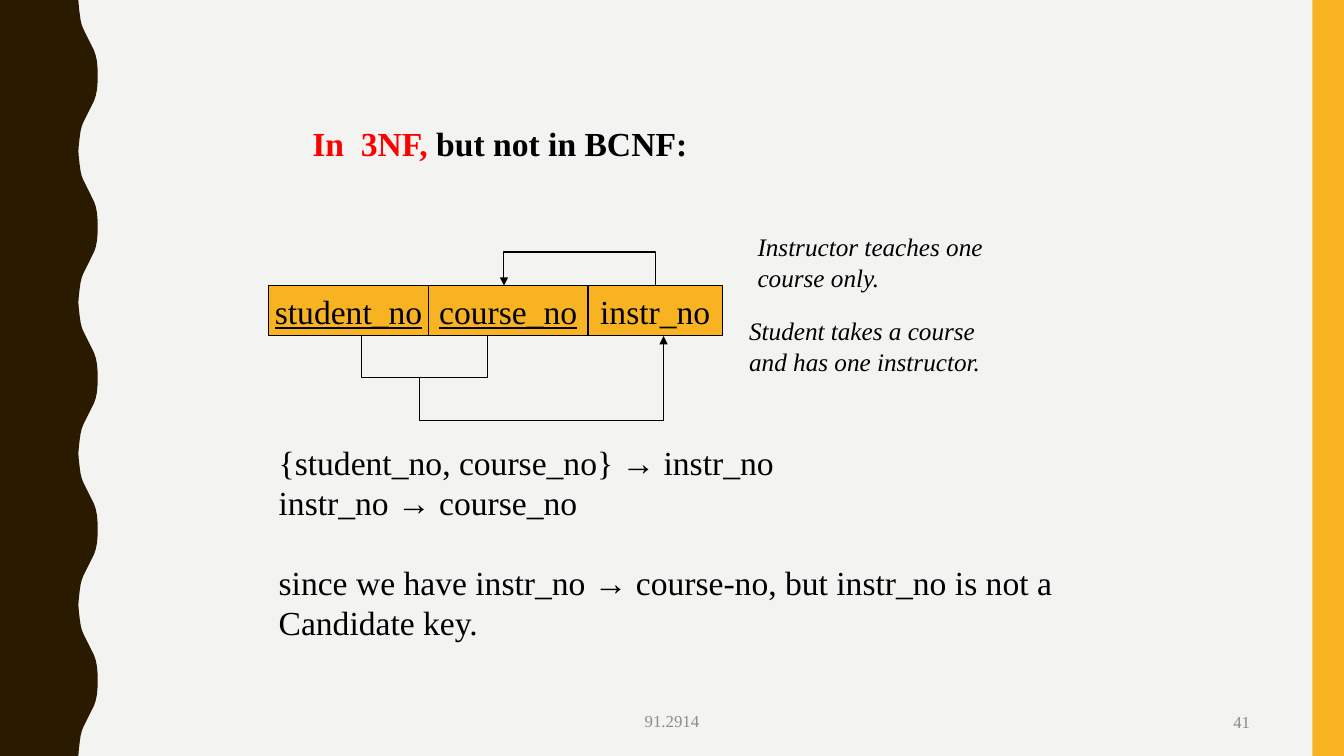
import pptx
import pptx.util
import pptx.dml.color
import pptx.enum.shapes
import pptx.enum.text
import pptx.oxml
import pptx.oxml.ns
from dataclasses import dataclass

ALIGN = pptx.enum.text.PP_ALIGN
ANCHOR = pptx.enum.text.MSO_ANCHOR


@dataclass(frozen=True)
class Theme:
    face: str = "Times New Roman"
    back: str = "F3F3F2"
    dark: str = "2A1A00"
    gold: str = "F8B323"
    ink: str = "000000"
    red: str = "FF0000"
    foot: str = "8C8C8C"
    page: str = "898989"
    large: int = 24
    note: int = 18
    small: int = 12
    rule: float = 0.75


def paint(fill, color):
    fill.solid()
    fill.fore_color.rgb = pptx.dml.color.RGBColor.from_string(color)


class Board:
    """A slide on a grid of 160 columns and 90 rows, twelve to the inch."""

    def __init__(self, deck, theme):
        self.theme = theme
        self.unit = pptx.util.Inches(1) / 12
        self.slide = deck.slides.add_slide(deck.slide_layouts[6])
        paint(self.slide.background.fill, theme.back)

    def grid(self, *cells):
        return [round(cell * self.unit) for cell in cells]

    def style(self, shape, fill=None, line=None):
        shape.shadow.inherit = False
        if fill:
            paint(shape.fill, fill)
        else:
            shape.fill.background()
        if line:
            paint(shape.line.fill, line)
            shape.line.width = pptx.util.Pt(self.theme.rule)
        else:
            shape.line.fill.background()

    def label(self, shape, lines, align=ALIGN.LEFT, anchor=ANCHOR.TOP, wrap=True, **base):
        """Fill a shape with lines of (text, format) runs; a gap goes before its line."""
        frame = shape.text_frame
        for key, value in dict(word_wrap=wrap, vertical_anchor=anchor).items():
            setattr(frame, key, value)
        for row, runs in enumerate(lines):
            para = frame.paragraphs[0] if row == 0 else frame.add_paragraph()
            para.alignment = align
            for text, form in runs:
                look = dict(name=self.theme.face, size=self.theme.large, color=self.theme.ink)
                look.update(base)
                look.update(form)
                if "gap" in look:
                    para.space_before = pptx.util.Pt(look.pop("gap"))
                run = para.add_run()
                run.text = text
                if "track" in look:
                    run.font._element.set("spc", str(look.pop("track") * 100))
                paint(run.font.fill, look.pop("color"))
                look["size"] = pptx.util.Pt(look["size"])
                for key, value in look.items():
                    setattr(run.font, key, value)

    def text(self, box, lines, **form):
        self.label(self.slide.shapes.add_textbox(*self.grid(*box)), lines, **form)

    def rect(self, box, fill, line=None):
        kind = pptx.enum.shapes.MSO_SHAPE.RECTANGLE
        shape = self.slide.shapes.add_shape(kind, *self.grid(*box))
        self.style(shape, fill, line)
        return shape

    def trace(self, points, fill=None, line=None, arrow=False):
        first, *rest = [self.grid(*point) for point in points]
        pen = self.slide.shapes.build_freeform(*first)
        pen.add_line_segments(rest, close=bool(fill))
        shape = pen.convert_to_shape()
        self.style(shape, fill, line)
        if arrow:
            edge = shape.element.spPr.find(pptx.oxml.ns.qn("a:ln"))
            space = pptx.oxml.ns.nsdecls("a")
            edge.append(pptx.oxml.parse_xml(f'<a:tailEnd {space} type="triangle"/>'))


def wave():
    """Outline of the left band: five mirrored bulges, 18 rows each."""
    xs = (9.33, 9.4, 9.5, 9.6, 9.75, 9.95, 10.2, 10.45, 10.7, 10.95, 11.2, 11.4, 11.55, 11.62, 11.64)
    ys = (0, 0.84, 1.68, 2.4, 3, 3.5, 4, 4.5, 5, 5.5, 6, 6.6, 7.32, 8.16, 9)
    half = list(zip(xs, ys))
    bulge = half + [(x, 18 - y) for x, y in half[-2::-1]]
    edge = [(x, y + 18 * turn) for turn in range(5) for x, y in bulge]
    return [(0, 0)] + edge + [(0, 90)]


def main():
    deck = pptx.Presentation()
    deck.slide_width = pptx.util.Inches(160 / 12)
    deck.slide_height = pptx.util.Inches(90 / 12)
    theme = Theme()
    board = Board(deck, theme)

    board.trace(wave(), fill=theme.dark)
    board.rect((156.25, 0, 3.75, 90), theme.gold)
    board.text((61, 83.4, 38, 4.8), [[("91.2914", {})]], align=ALIGN.CENTER,
               anchor=ANCHOR.MIDDLE, size=theme.small, color=theme.foot)
    board.text((113, 83.6, 37, 4.6), [[("41", {})]], align=ALIGN.RIGHT,
               anchor=ANCHOR.MIDDLE, size=theme.small, color=theme.page)

    left = 32
    for name, width, key in (("student_no", 19, True), ("course_no", 19, True), ("instr_no", 16, False)):
        cell = board.rect((left, 34, width, 6), theme.gold, theme.ink)
        board.label(cell, [[(name, {"underline": key})]], align=ALIGN.CENTER,
                    anchor=ANCHOR.MIDDLE, wrap=False)
        left += width

    links = (
        ([(43, 40), (43, 45), (58, 45), (58, 40)], False),
        ([(50, 45), (50, 50), (79, 50), (79, 40)], True),
        ([(78, 34), (78, 30), (60, 30), (60, 34)], True),
    )
    for points, arrow in links:
        board.trace(points, line=theme.ink, arrow=arrow)

    notes = (
        (89, 27, "Instructor teaches one course only."),
        (88, 37, "Student takes a course and has one instructor."),
    )
    for col, row, note in notes:
        board.text((col, row, 34, 8.4), [[(note, {})]], size=theme.note, italic=True)

    red = {"color": theme.red}
    board.text((36, 14, 52, 6), [[("In", red), (" ", {"track": 6}), ("3NF, ", red),
                                  ("but not in BCNF:", {})]], bold=True)
    board.text((32, 52, 96, 25.4), [
        [("{student_no, course_no} → instr_no", {})],
        [("instr_no → course_no", {})],
        [("since we have instr_no → course-no, but instr_no is not a", {"gap": 28})],
        [("Candidate key.", {})],
    ])
    deck.save("out.pptx")


if __name__ == "__main__":
    main()
